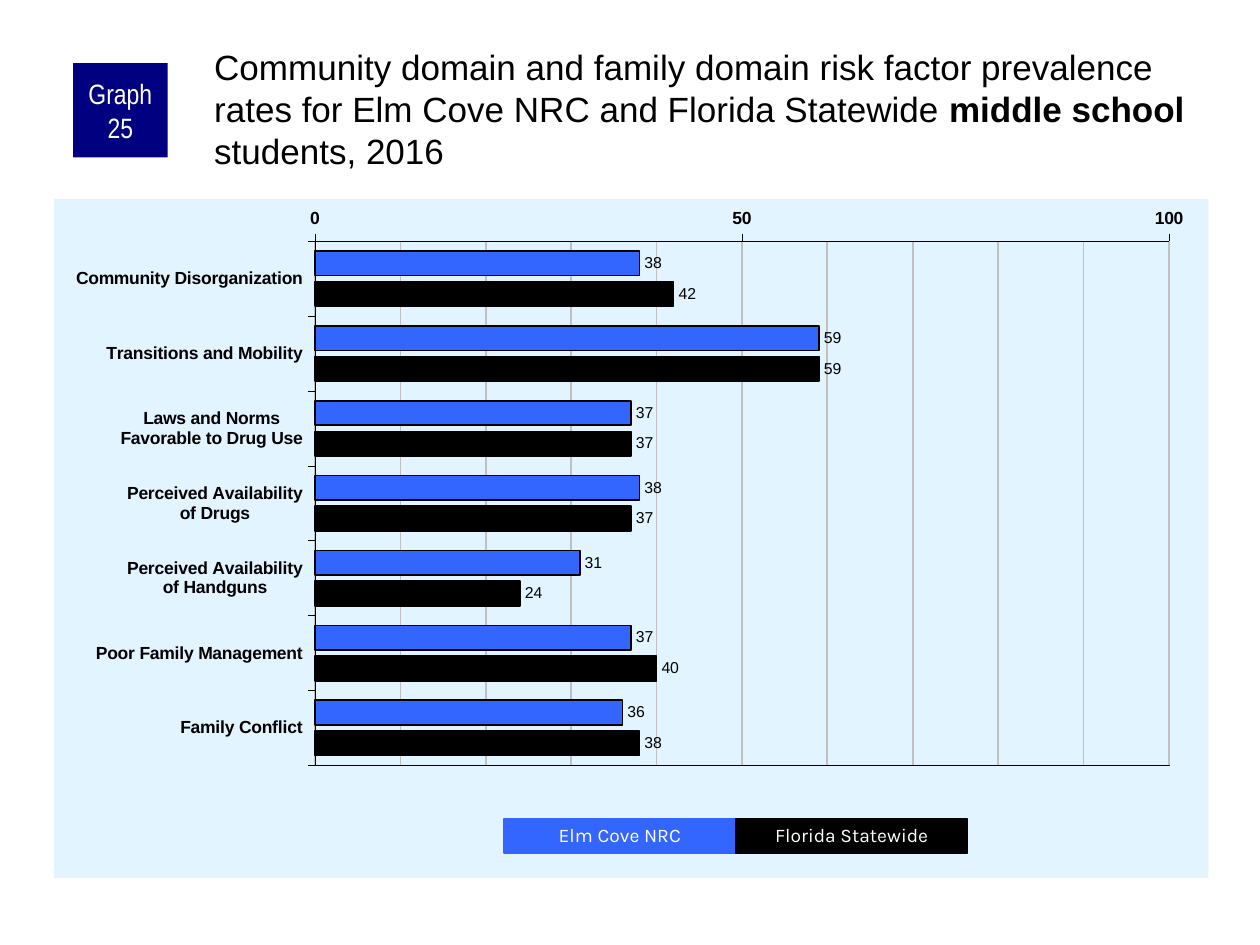
from copy import deepcopy
from dataclasses import dataclass

from pptx import Presentation
from pptx.chart.data import CategoryChartData
from pptx.dml.color import RGBColor
from pptx.enum.chart import XL_AXIS_CROSSES, XL_CHART_TYPE, XL_LABEL_POSITION, XL_TICK_MARK
from pptx.enum.shapes import MSO_SHAPE
from pptx.enum.text import MSO_ANCHOR, PP_ALIGN
from pptx.oxml import parse_xml
from pptx.oxml.ns import nsdecls, qn
from pptx.util import Inches, Pt

BAR = XL_CHART_TYPE.BAR_CLUSTERED
OUT_END = XL_LABEL_POSITION.OUTSIDE_END
AT_MAX = XL_AXIS_CROSSES.MAXIMUM
TICK_OUT, TICK_NONE = XL_TICK_MARK.OUTSIDE, XL_TICK_MARK.NONE
RECT = MSO_SHAPE.RECTANGLE
MIDDLE = MSO_ANCHOR.MIDDLE
CENTER = PP_ALIGN.CENTER

COLORS = {
    "panel": "E1F4FF", "navy": "000080", "blue": "3366FF",
    "black": "000000", "white": "FFFFFF", "grid": "C0C0C0",
}
LABELS = [
    "Community Disorganization", "Transitions and Mobility",
    "Laws and Norms\nFavorable to Drug Use", "Perceived Availability\nof Drugs",
    "Perceived Availability\nof Handguns", "Poor Family Management", "Family Conflict",
]
PLOT = {"x": 0.226, "y": 0.062, "w": 0.74, "h": 0.772}


@dataclass
class Group:
    name: str
    color: str
    rates: list[int]


@dataclass
class Box:
    text: str
    left: float
    top: float
    width: float
    height: float
    color: str
    font: str
    size: float
    inset: float = 0.1
    border: bool = False
    spacing: float = 1.0


GROUPS = [
    Group("Elm Cove NRC", "blue", [38, 59, 37, 38, 31, 37, 36]),
    Group("Florida Statewide", "black", [42, 59, 37, 37, 24, 40, 38]),
]


def rgb(name: str) -> RGBColor:
    return RGBColor.from_string(COLORS[name])


def set_font(font, name: str, size: float, color: str, bold: bool = False) -> None:
    font.name, font.size, font.bold = name, Pt(size), bold
    font.color.rgb = rgb(color)


def set_line(line, color: str, width: float) -> None:
    line.color.rgb = rgb(color)
    line.width = Pt(width)


def draw_box(slide, box: Box) -> None:
    shape = slide.shapes.add_shape(
        RECT, Inches(box.left), Inches(box.top), Inches(box.width), Inches(box.height))
    shape.shadow.inherit = False
    shape.fill.solid()
    shape.fill.fore_color.rgb = rgb(box.color)
    if box.border:
        set_line(shape.line, box.color, 0.75)
    else:
        shape.line.fill.background()
    frame = shape.text_frame
    frame.text = box.text
    frame.word_wrap = True
    frame.vertical_anchor = MIDDLE
    frame.margin_left = frame.margin_right = Inches(box.inset)
    frame.margin_top = frame.margin_bottom = 0
    para = frame.paragraphs[0]
    para.alignment = CENTER
    para.line_spacing = box.spacing
    set_font(para.runs[0].font, box.font, box.size, "white")


def draw_title(slide) -> None:
    shape = slide.shapes.add_textbox(Inches(1.67), Inches(0.33), Inches(7.92), Inches(0.83))
    frame = shape.text_frame
    frame.word_wrap = True
    frame.margin_left = frame.margin_top = Inches(0.03)
    frame.margin_right = frame.margin_bottom = 0
    names = " and ".join(group.name for group in GROUPS)
    parts = [
        ("Community domain and family domain risk factor prevalence "
         f"rates for {names} ", False),
        ("middle school", True),
        (" students, 2016", False),
    ]
    for text, bold in parts:
        run = frame.paragraphs[0].add_run()
        run.text = text
        set_font(run.font, "Arial", 20, "black", bold)


def style_axes(chart) -> None:
    cats, rates = chart.category_axis, chart.value_axis
    for axis in (cats, rates):
        axis.major_tick_mark, axis.minor_tick_mark = TICK_OUT, TICK_NONE
        set_line(axis.format.line, "black", 0.25)
        set_font(axis.tick_labels.font, "Arial", 10, "black", True)
    cats.reverse_order = True
    cats.crosses = AT_MAX
    cats.has_major_gridlines = False
    rates.minimum_scale, rates.maximum_scale = 0, 100
    rates.major_unit, rates.minor_unit = 50, 10
    rates.has_major_gridlines = rates.has_minor_gridlines = True
    set_line(rates.major_gridlines.format.line, "grid", 1)
    # Minor gridlines take the look of the major ones
    root = chart.element
    major = next(root.iter(qn("c:majorGridlines")))
    minor = next(root.iter(qn("c:minorGridlines")))
    minor.append(deepcopy(major[0]))


def solid(color: str) -> str:
    return f'<a:solidFill><a:srgbClr val="{COLORS[color]}"/></a:solidFill>'


def make_props(fill: str, line: str):
    return parse_xml(f'<c:spPr {nsdecls("c", "a")}>{fill}<a:ln w="{Pt(0.25)}">{line}</a:ln></c:spPr>')


def place_plot(chart) -> None:
    area = next(chart.element.iter(qn("c:plotArea")))
    for tag in ("c:layout", "c:spPr"):
        for old in area.findall(qn(tag)):
            area.remove(old)
    modes = "".join(f'<c:{key}Mode val="edge"/>' for key in "xy")
    sizes = "".join(f'<c:{key} val="{part}"/>' for key, part in PLOT.items())
    area.insert(0, parse_xml(
        f'<c:layout {nsdecls("c")}><c:manualLayout><c:layoutTarget val="inner"/>'
        f"{modes}{sizes}</c:manualLayout></c:layout>"))
    # Thin frame round the plot, coloured panel behind it
    area.append(make_props("<a:noFill/>", solid("black")))
    body = chart.element.find(qn("c:chart"))
    body.addnext(make_props(solid("panel"), "<a:noFill/>"))


def draw_chart(slide) -> None:
    data = CategoryChartData()
    data.categories = LABELS
    for group in GROUPS:
        data.add_series(group.name, group.rates)
    chart = slide.shapes.add_chart(
        BAR, Inches(0.43), Inches(1.58), Inches(9.16), Inches(5.39), data).chart
    chart.has_legend = chart.has_title = False
    set_font(chart.font, "Arial", 11.8, "black")
    plot = chart.plots[0]
    plot.gap_width, plot.overlap = 80, -25
    plot.vary_by_categories = False
    for series, group in zip(plot.series, GROUPS):
        series.invert_if_negative = False
        series.format.fill.solid()
        series.format.fill.fore_color.rgb = rgb(group.color)
        set_line(series.format.line, "black", 1)
        tags = series.data_labels
        tags.show_value = True
        tags.position = OUT_END
        set_font(tags.font, "Arial", 9, "black")
    style_axes(chart)
    place_plot(chart)


def main() -> None:
    deck = Presentation()
    deck.slide_width, deck.slide_height = Inches(10), Inches(7.5)
    slide = deck.slides.add_slide(deck.slide_layouts[6])
    draw_chart(slide)
    # Graph number and title
    draw_box(slide, Box("Graph 25", 0.58, 0.5, 0.75, 0.75, "navy", "Arial Narrow", 16, 0.05))
    draw_title(slide)
    # Legend keys side by side
    width = 1.84
    for i, group in enumerate(GROUPS):
        draw_box(slide, Box(group.name, 4 + i * width, 6.5, width, 0.27, group.color,
                            "Karla", 11, border=True, spacing=0.9))
    deck.save("out.pptx")


if __name__ == "__main__":
    main()
